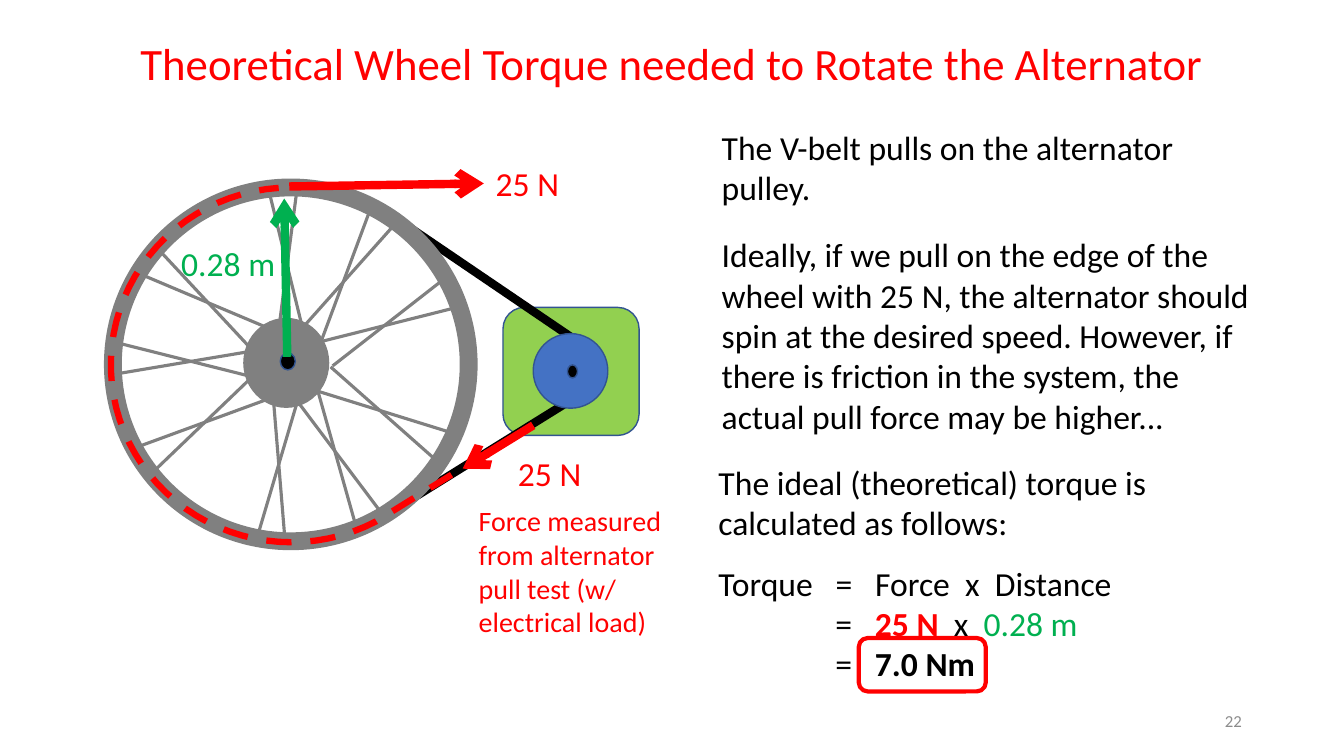
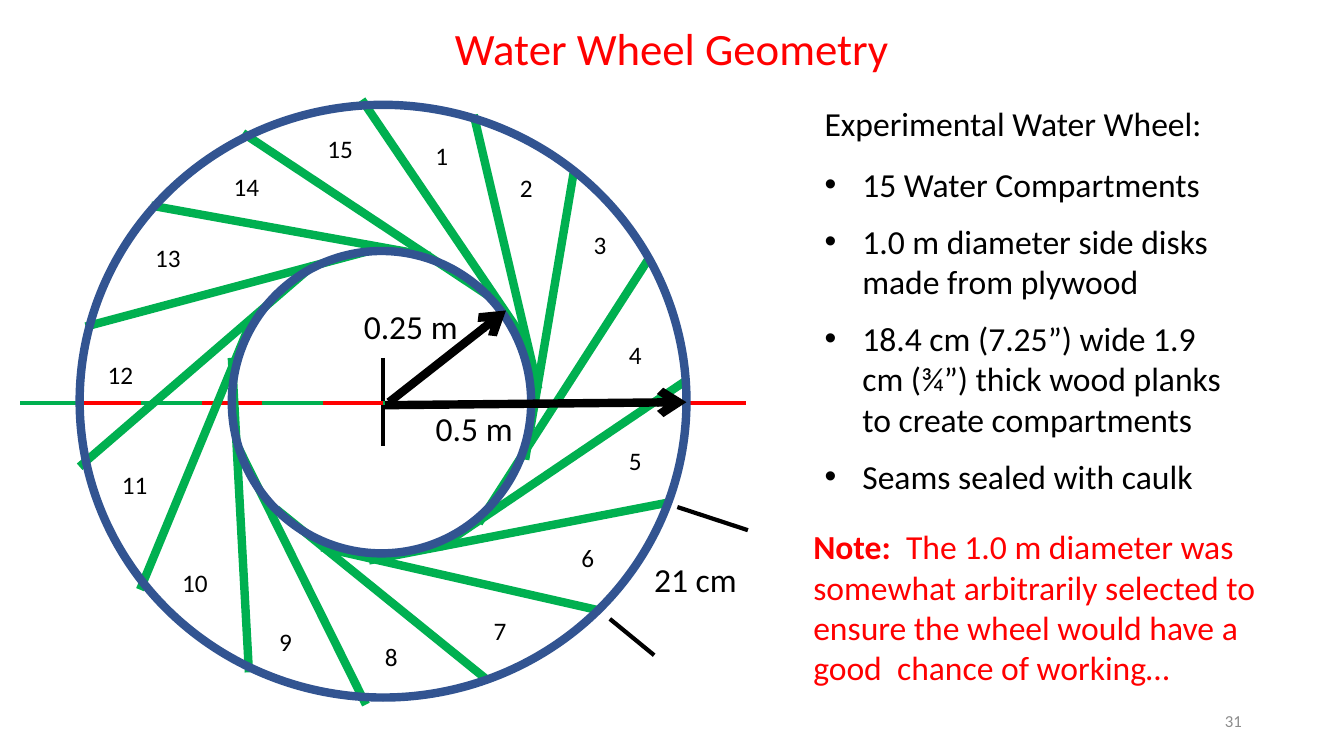
from copy import deepcopy
from math import cos, radians, sin

from lxml.etree import SubElement
from pptx import Presentation
from pptx.dml.color import RGBColor
from pptx.enum.dml import MSO_LINE
from pptx.enum.shapes import MSO_CONNECTOR, MSO_SHAPE as PRESET, PP_PLACEHOLDER
from pptx.enum.text import MSO_ANCHOR as ANCHOR, MSO_AUTO_SIZE, PP_ALIGN as ALIGN
from pptx.oxml.ns import qn
from pptx.util import Emu, Pt

# Shared look
FONT = "Calibri"
RED = RGBColor(0xFF, 0x00, 0x00)
GREEN = RGBColor(0x00, 0xB0, 0x50)
LIME = RGBColor(0x92, 0xD0, 0x50)
BLUE = RGBColor(0x44, 0x72, 0xC4)
NAVY = RGBColor(0x32, 0x54, 0x91)
GRAY = RGBColor(0x80, 0x80, 0x80)
PALE = RGBColor(0x8C, 0x8C, 0x8C)
BLACK = RGBColor(0x00, 0x00, 0x00)

presentation = Presentation()
presentation.slide_width = Emu(12192000)
presentation.slide_height = Emu(6858000)

# Grid of square cells: 75 rows, 133.33 columns
CELL = presentation.slide_height / 75


def add_line(slide, points, color, width, arrow=False):
    """Draw a straight line through (x1, y1, x2, y2), given in cells."""
    ends = [Emu(round(value * CELL)) for value in points]
    line = slide.shapes.add_connector(MSO_CONNECTOR.STRAIGHT, *ends)
    line.line.color.rgb = color
    line.line.width = Pt(width)
    properties = line.element.spPr
    if arrow:
        SubElement(properties.find(qn("a:ln")), qn("a:tailEnd"), type="arrow")
    SubElement(properties, qn("a:effectLst"))


def add_figure(slide, preset, box, fill, color, width):
    """Draw a preset shape in (left, top, width, height), given in cells."""
    shape = slide.shapes.add_shape(preset, *(Emu(round(value * CELL)) for value in box))
    shape.shadow.inherit = False
    if fill is None:
        shape.fill.background()
    else:
        shape.fill.solid()
        shape.fill.fore_color.rgb = fill
    shape.line.color.rgb = color
    shape.line.width = Pt(width)


# Slides with title and number; texts holds
# (slide, placeholder, box, size, alignment, anchor, paragraphs),
# a paragraph is (space after, indent in cells or BULLET, runs),
# a run is (text, color, bold)
BULLET = None
layout = presentation.slide_layouts.get_by_name("Title and Content")
number_holder = next(holder for holder in layout.placeholders
                     if holder.placeholder_format.type == PP_PLACEHOLDER.SLIDE_NUMBER)
slides, texts = [], []
for title, title_top, number in (
    ("Theoretical Wheel Torque needed to Rotate the Alternator", 3, "22"),
    ("Water Wheel Geometry", 1.5, "31"),
):
    slide = presentation.slides.add_slide(layout)
    slide.shapes.element.append(deepcopy(number_holder.element))
    texts += [
        (slide, slide.shapes.title, (12, title_top, 109.3, 6.4), 32, ALIGN.CENTER,
         ANCHOR.MIDDLE, [(0, 0, [(title, RED, False)])]),
        (slide, slide.shapes[-1], (94.2, 69.5, 30, 4), 12, ALIGN.RIGHT,
         ANCHOR.MIDDLE, [(0, 0, [(number, PALE, False)])]),
    ]
    slides.append(slide)
torque, geometry = slides

# Torque slide: alternator and belt
add_figure(torque, PRESET.ROUNDED_RECTANGLE, (49.9, 30.5, 13.5, 12.7), LIME, NAVY, 1)
for belt in ((35.7, 52.7, 58.4, 38.6), (37.6, 20.5, 59.1, 35.1)):
    add_line(torque, belt, BLACK, 6)

# Torque slide: spokes, rim, hub and pulley
for spoke in (
    (32.8, 36.4, 43.2, 45.6), (31.5, 38.8, 44.7, 42.9), (31.4, 38.3, 35.4, 52.5),
    (29.2, 39.4, 38, 51.1), (29.6, 39.5, 25.4, 53.7), (27.1, 39.3, 28.3, 53.9),
    (27.6, 33.1, 29.5, 18.5), (30.1, 32.9, 26.6, 18.6), (29.5, 33.1, 39.3, 22.1),
    (31.7, 34.3, 36.8, 20.6), (31.8, 33.9, 45.3, 30.5), (33, 36.3, 43.9, 27.8),
    (26.3, 39.7, 13.2, 44.5), (24.9, 37.5, 14.9, 47.1), (25.1, 37.4, 11.6, 34),
    (25.2, 34.8, 11.5, 37.1), (25, 34.7, 15.5, 24.5), (26.5, 32.5, 13.7, 27.1),
):
    add_line(torque, spoke, GRAY, 2.25)
for box, fill, color, width in (
    ((11.2, 18.6, 35.3, 35.1), None, GRAY, 12.75),
    ((24.2, 31.6, 8.4, 8.8), GRAY, GRAY, 1),
    ((52.9, 33.1, 7.4, 7.4), BLUE, NAVY, 1),
    ((56.3, 36.2, 1, 1.3), BLACK, NAVY, 1),
    ((27.8, 35, 1.5, 1.7), BLACK, NAVY, 1),
):
    add_figure(torque, PRESET.OVAL, box, fill, color, width)

# Torque slide: dashed path of the pull around the rim
path = [(44.8, 47.1)] + [
    (28.9 + 17.9 * cos(radians(angle)), 36.2 + 17.6 * sin(radians(angle)))
    for angle in range(62, 267, 4)]
path = [(round(x * CELL), round(y * CELL)) for x, y in path]
builder = torque.shapes.build_freeform(*path[0])
builder.add_line_segments(path[1:], close=False)
pull_path = builder.convert_to_shape()
pull_path.shadow.inherit = False
pull_path.fill.background()
pull_path.line.color.rgb = RED
pull_path.line.width = Pt(4.5)
pull_path.line.dash_style = MSO_LINE.DASH

# Torque slide: arrows and frame of the result
for arrow, color in (
    ((28.5, 35.4, 28.2, 19.7), GREEN),
    ((28.7, 18.5, 48, 18.2), RED),
    ((52.9, 42.2, 45.9, 46.5), RED),
):
    add_line(torque, arrow, color, 6, arrow=True)
add_figure(torque, PRESET.ROUNDED_RECTANGLE, (85.2, 63.3, 12.6, 5.3), None, RED, 3)

# Geometry slide: centre mark and axis in alternating colours
for mark in ((38, 35.5, 38, 44.2), (33.5, 40, 42.5, 40)):
    add_line(geometry, mark, BLACK, 3)
SEGMENT = 6
for index in range(12):
    left = 2 + index * SEGMENT
    add_line(geometry, (left, 40, left + SEGMENT, 40), (GREEN, RED)[index % 2], 3)

# Geometry slide: planks, width marks, rings and radii
for plank in (
    (35.9, 9.9, 52.3, 34.1), (47, 11.4, 53.4, 38.6), (56.9, 17.2, 52.1, 45.6),
    (68, 37.8, 43.6, 54.3), (64.4, 25.6, 47.5, 51.9), (66.1, 49.9, 36.6, 55.6),
    (59.2, 60.5, 31.9, 54.3), (48.4, 67.5, 27.4, 50.5), (36.3, 69.9, 23.7, 44.5),
    (13.9, 58.5, 24.7, 32.4), (24.7, 66.7, 23, 35.5), (7.9, 46.3, 31.1, 26.3),
    (15, 20.4, 42.7, 25.4), (8.5, 32.4, 36.6, 24.9), (24.1, 13.2, 48.4, 29.3),
):
    add_line(geometry, plank, GREEN, 6)
for mark in ((67.2, 50.3, 74.2, 52.6), (60.5, 61.4, 64.9, 65)):
    add_line(geometry, mark, BLACK, 3)
for ring in ((7.9, 10.4, 60.2, 58.8), (23, 24.9, 29.7, 30)):
    add_figure(geometry, PRESET.OVAL, ring, None, NAVY, 6)
for radius in ((38.2, 40.2, 68.1, 39.9), (38.6, 39.9, 50.2, 30.8)):
    add_line(geometry, radius, BLACK, 6, arrow=True)

# Labels of both drawings
for slide, label, box, size, color, alignment in (
    (torque, "0.28 m", (17, 23.6, 12.3, 5), 24, GREEN, ALIGN.LEFT),
    (torque, "25 N", (48.2, 15.7, 12, 5), 24, RED, ALIGN.LEFT),
    (torque, "25 N", (50.4, 44.4, 12, 5), 24, RED, ALIGN.LEFT),
    (torque, "Force measured from alternator pull test (w/ electrical load)",
     (46.5, 49.5, 22.1, 14.5), 20, RED, ALIGN.LEFT),
    (geometry, "21 cm", (63.9, 55, 14.6, 5), 24, BLACK, ALIGN.LEFT),
    (geometry, "0.5 m", (41.2, 40, 11.7, 5), 24, BLACK, ALIGN.CENTER),
    (geometry, "0.25 m", (34.9, 29.9, 11.7, 5), 24, BLACK, ALIGN.CENTER),
):
    texts.append((slide, None, box, size, alignment, ANCHOR.TOP,
                  [(0, 0, [(label, color, False)])]))

# Compartment numbers, clockwise
for number, (left, top) in enumerate((
    (42.2, 13.4), (50.6, 16.6), (57.9, 22.3), (61.4, 33.2), (61.4, 43.7),
    (56.7, 53.3), (48, 60.6), (37.2, 63.1), (26.7, 61.6), (17.1, 55.8),
    (11.1, 46.1), (9.7, 35.2), (14.4, 23.5), (22.2, 16.5), (31.5, 12.7),
), start=1):
    texts.append((geometry, None, (left, top, 5.3, 4), 18, ALIGN.LEFT, ANCHOR.TOP,
                  [(0, 0, [(str(number), BLACK, False)])]))

# Explanations on the right
EQUALS = 11.6
texts += [
    (torque, torque.placeholders[1], (70.6, 12.1, 55.5, 31.9), 24, ALIGN.LEFT, ANCHOR.TOP, [
        (19, 0, [("The V-belt pulls on the alternator pulley.", BLACK, False)]),
        (0, 0, [("Ideally, if we pull on the edge of the wheel with 25 N, the alternator "
                 "should spin at the desired speed. However, if there is friction in the "
                 "system, the actual pull force may be higher...", BLACK, False)]),
    ]),
    (torque, None, (70.3, 45.3, 56.7, 23.2), 24, ALIGN.LEFT, ANCHOR.TOP, [
        (14.5, 0, [("The ideal (theoretical) torque is calculated as follows:",
                    BLACK, False)]),
        (0, 0, [("Torque   =   Force  x  Distance", BLACK, False)]),
        (0, EQUALS, [("=   ", BLACK, False), ("25 N", RED, True),
                     ("  x  ", BLACK, False), ("0.28 m", GREEN, False)]),
        (0, EQUALS, [("=   ", BLACK, False), ("7.0 Nm", BLACK, True)]),
    ]),
    (geometry, geometry.placeholders[1], (80.8, 9.7, 42.6, 40.4), 24, ALIGN.LEFT, ANCHOR.TOP, [
        (14.5, 0, [("Experimental Water Wheel:", BLACK, False)]),
        *((12, BULLET, [(item, BLACK, False)]) for item in (
            "15 Water Compartments",
            "1.0 m diameter side disks made from plywood",
            "18.4 cm (7.25”) wide 1.9 cm (¾”) thick wood planks to create compartments",
            "Seams sealed with caulk",
        )),
    ]),
    (geometry, None, (79.7, 51.7, 49.4, 17.2), 24, ALIGN.LEFT, ANCHOR.TOP, [
        (0, 0, [("Note:", RED, True),
                ("  The 1.0 m diameter was somewhat arbitrarily selected to ensure the "
                 "wheel would have a good  chance of working…", RED, False)]),
    ]),
]

# Write every text, run by run
for slide, shape, box, size, alignment, anchor, paragraphs in texts:
    if shape is None:
        shape = slide.shapes.add_textbox(0, 0, 0, 0)
    shape.left, shape.top, shape.width, shape.height = (
        Emu(round(value * CELL)) for value in box)
    frame = shape.text_frame
    frame.clear()
    frame.word_wrap = True
    frame.auto_size = MSO_AUTO_SIZE.NONE
    frame.vertical_anchor = anchor
    for index, (space_after, indent, runs) in enumerate(paragraphs):
        paragraph = frame.add_paragraph() if index else frame.paragraphs[0]
        paragraph.alignment = alignment
        paragraph.space_before = Pt(0)
        paragraph.space_after = Pt(space_after)
        for content, color, bold in runs:
            run = paragraph.add_run()
            run.text = content
            run.font.name = FONT
            run.font.size = Pt(size)
            run.font.bold = bold
            run.font.color.rgb = color
        # Bulleted paragraphs keep the template's bullet and hanging indent
        if indent is not BULLET:
            properties = paragraph._p.get_or_add_pPr()
            properties.set("marL", str(round(indent * CELL)))
            properties.set("indent", "0")
            SubElement(properties, qn("a:buNone"))

presentation.save("out.pptx")
